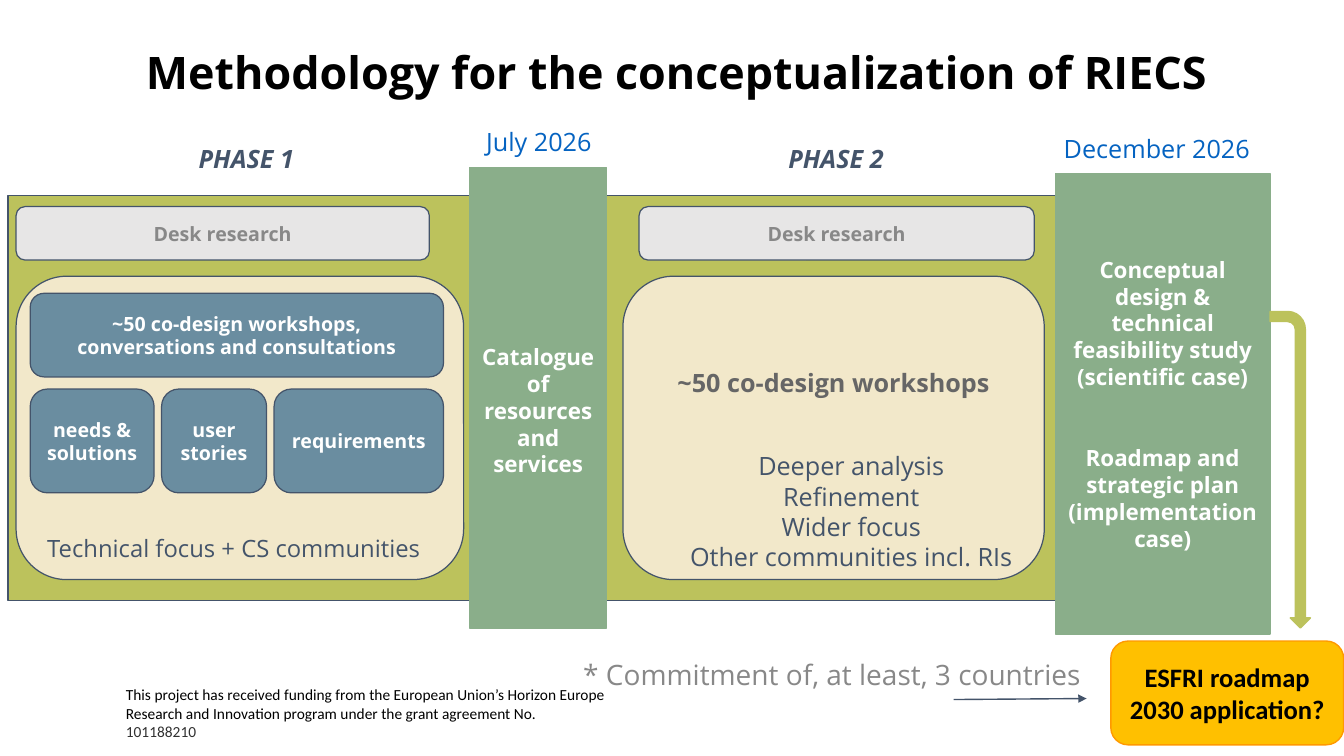
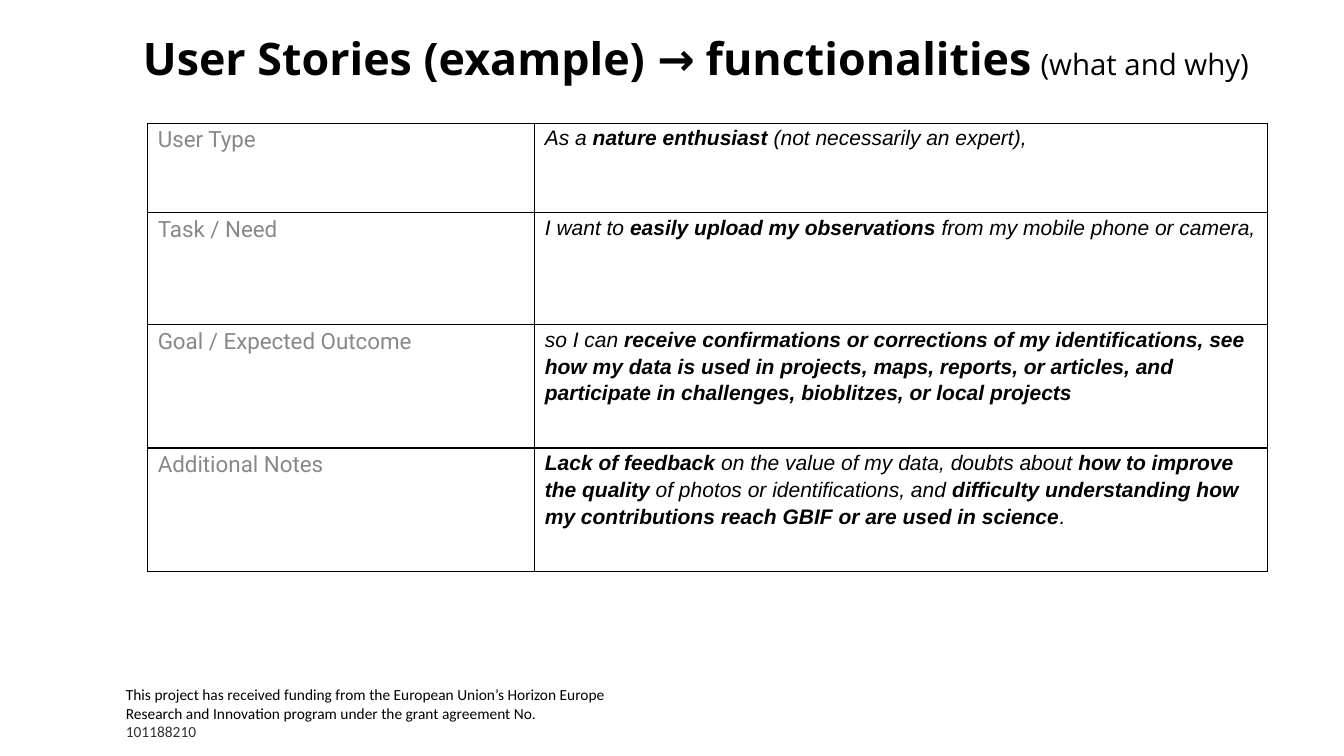
import pptx
import pptx.util
import pptx.dml.color
import pptx.enum.shapes
import pptx.enum.text
import pptx.oxml
import pptx.oxml.ns
from lxml import etree

Pt = pptx.util.Pt
RGB = pptx.dml.color.RGBColor
SHAPE = pptx.enum.shapes.MSO_SHAPE
ALIGN = pptx.enum.text.PP_ALIGN
ANCHOR = pptx.enum.text.MSO_ANCHOR
qn = pptx.oxml.ns.qn

# Shared colours and fonts
BLACK, WHITE = RGB(0, 0, 0), RGB(255, 255, 255)
LIME, CREAM, GREEN = RGB(0xBC, 0xC2, 0x5C), RGB(0xF2, 0xE8, 0xCA), RGB(0x8A, 0xAE, 0x8A)
SLATE, STEEL, BLUE = RGB(0x44, 0x54, 0x6A), RGB(0x6A, 0x8D, 0xA0), RGB(0x05, 0x63, 0xC1)
PALE, GREY, DARK_GREY = RGB(0xE7, 0xE6, 0xE6), RGB(0x88, 0x88, 0x88), RGB(0x66, 0x66, 0x66)
AMBER, ORANGE, CHARCOAL = RGB(0xFF, 0xC0, 0), RGB(0xFF, 0x99, 0), RGB(0x30, 0x30, 0x30)
SANS = "Open Sans"
TITLE_SIZE = (889.92, 59.76)
FOOTER_BOX = (82.8, 486, 358.2, 47.52)

# Shared content: (text, overrides) runs
FOOTER = [("This project has received funding from the European Union’s Horizon Europe "
           "Research and Innovation program under the grant agreement No. ", {}),
          ("101188210", {"color": CHARCOAL})]

# Slide 1 content
METHOD_TITLE = [("Methodology for the conceptualization of RIECS", {"bold": True})]
BANDS = [5.76, 426.96]
BAND_TOP, BAND_SIZE = 139.68, (339.84, 289.44)
PHASE_PANELS = [(11.52, 197.28, 319.68, 216.72), (444.96, 197.28, 300.96, 216.72)]
DESK_RESEARCH = [(11.52, 295.2), (456.48, 282.24)]
PHASES = [("PHASE 1", 133.2), ("PHASE 2", 554.4)]
DATES = [("July 2026", 305, 81.36, 159.84), ("December 2026", 739.5, 86.4, 173.52)]
RESULTS = [
    (["Catalogue of resources and services"], (335.52, 119.52, 97.92, 329.04), 18),
    (["Conceptual design & technical feasibility study", "(scientific case)",
      "Roadmap and strategic plan (implementation case)"],
     (753.84, 123.84, 153.36, 329.04), 0),
]
WORKSHOPS = ["~50 co-design workshops,", "conversations and consultations"]
FINDINGS = [("needs & solutions", 88.5), ("user stories", 75), ("requirements", 121)]
FINDINGS_LEFT, FINDINGS_GAP = 21.6, 5.35
PHASE_2_FOCUS = ["Deeper analysis", "Refinement", "Wider focus", "Other communities incl. RIs"]

# Slide 2 content; ** toggles bold
STORIES_TITLE = [("User Stories (example) → functionalities", {"bold": True}),
                 (" (what and why)", {"size": 21})]
STORY_ROWS = [
    ("User Type", "As a **nature enthusiast **(not necessarily an expert),", 64),
    ("Task / Need",
     "I want to **easily upload my observations** from my mobile phone or camera,", 80),
    ("Goal / Expected Outcome",
     "so I can **receive confirmations or corrections of my identifications, see how my data "
     "is used in projects, maps, reports, or articles, and participate in challenges, "
     "bioblitzes, or local projects**", 88),
    ("Additional Notes",
     "**Lack of feedback** on the value of my data, doubts about **how to improve the quality** "
     "of photos or identifications, and **difficulty understanding how my contributions reach "
     "GBIF or are used in science**.", 88),
]
STORY_COLUMNS = [276.5, 523.5]


def style(font, size=None, color=None, name=None, bold=None, italic=None):
    if size:
        font.size = Pt(size)
    if color is not None:
        font.color.rgb = color
    if name:
        font.name = name
    if bold is not None:
        font.bold = bold
    if italic is not None:
        font.italic = italic


def write(frame, paragraphs, align=ALIGN.LEFT, spacing=None, gaps=None, **font):
    """Each paragraph is a string or a list of (text, overrides) runs."""
    for index, content in enumerate(paragraphs):
        paragraph = frame.paragraphs[0] if index == 0 else frame.add_paragraph()
        paragraph.alignment = align
        if spacing:
            paragraph.line_spacing = spacing
        if gaps and index in gaps:
            paragraph.space_before = Pt(gaps[index])
        style(paragraph.font, **font)
        for text, overrides in [(content, {})] if isinstance(content, str) else content:
            run = paragraph.add_run()
            run.text = text
            style(run.font, **overrides)


def set_insets(frame, left, top, right, bottom):
    frame.margin_left, frame.margin_top = Pt(left), Pt(top)
    frame.margin_right, frame.margin_bottom = Pt(right), Pt(bottom)


def add_text(slide, box, paragraphs, insets=(8.64,) * 4, **options):
    frame = slide.shapes.add_textbox(*map(Pt, box)).text_frame
    frame.word_wrap = True
    set_insets(frame, *insets)
    write(frame, paragraphs, **options)


def add_block(slide, kind, box, fill, line=SLATE, weight=0.89, paragraphs=(),
              insets=(8.64,) * 4, **options):
    block = slide.shapes.add_shape(kind, *map(Pt, box))
    block.shadow.inherit = False
    block.fill.solid()
    block.fill.fore_color.rgb = fill
    block.line.color.rgb = line
    block.line.width = Pt(weight)
    frame = block.text_frame
    frame.word_wrap = True
    frame.vertical_anchor = ANCHOR.MIDDLE
    set_insets(frame, *insets)
    write(frame, paragraphs, align=ALIGN.CENTER, **options)
    return block


def add_framed_slide(deck, title, left, top):
    slide = deck.slides.add_slide(deck.slide_layouts[6])
    insets = (7.2, 3.6, 7.2, 3.6)
    add_text(slide, FOOTER_BOX, [FOOTER], insets, size=11, name="Calibri", color=BLACK)
    add_text(slide, (left, top, *TITLE_SIZE), [title], insets, spacing=0.9,
             size=32, name=SANS, color=BLACK)
    return slide


def add_arrow(slide, start, end):
    arrow = slide.shapes.add_connector(pptx.enum.shapes.MSO_CONNECTOR.STRAIGHT,
                                       *map(Pt, (*start, *end)))
    arrow.line.color.rgb = SLATE
    arrow.line.width = Pt(1)
    etree.SubElement(arrow.line._get_or_add_ln(), qn("a:tailEnd"), type="triangle")
    etree.SubElement(arrow._element.spPr, qn("a:effectLst"))


def add_borders(cell):
    properties = cell._tc.get_or_add_tcPr()
    for side in ("a:lnL", "a:lnR", "a:lnT", "a:lnB"):
        border = etree.SubElement(properties, qn(side), w=str(Pt(1)))
        fill = etree.SubElement(border, qn("a:solidFill"))
        etree.SubElement(fill, qn("a:srgbClr"), val=str(BLACK))


def build_methodology(deck):
    slide = add_framed_slide(deck, METHOD_TITLE, 97.2, 32.4)
    rounded = SHAPE.ROUNDED_RECTANGLE

    # Phase bands, panels and desk research
    for left in BANDS:
        add_block(slide, SHAPE.RECTANGLE, (left, BAND_TOP, *BAND_SIZE), LIME)
    add_block(slide, rounded, PHASE_PANELS[0], CREAM)
    add_block(slide, rounded, PHASE_PANELS[1], CREAM, paragraphs=["~50 co-design workshops"],
              insets=(8.64, 8.64, 8.64, 74), size=18, name=SANS, color=DARK_GREY, bold=True)
    for left, width in DESK_RESEARCH:
        add_block(slide, rounded, (left, 147.6, width, 38.16), PALE,
                  paragraphs=["Desk research"], size=14, name=SANS, color=GREY, bold=True)

    # Result columns, with their dates and phase names
    for lines, box, drop in RESULTS:
        add_block(slide, SHAPE.RECTANGLE, box, GREEN, GREEN, paragraphs=lines,
                  insets=(8.64, 8.64 + drop, 8.64, 8.64), gaps={2: 38.5},
                  size=16, name=SANS, color=WHITE, bold=True)
    for date, left, top, width in DATES:
        add_text(slide, (left, top, width, 53.28), [date], align=ALIGN.CENTER,
                 size=18, name=SANS, color=BLUE)
    for phase, left in PHASES:
        add_text(slide, (left, 93.6, 111.6, 38.88), [phase],
                 size=18, name=SANS, color=SLATE, bold=True, italic=True)

    # Phase 1 activities
    activity = dict(insets=(7.2,) * 4, size=14, name=SANS, color=WHITE, bold=True)
    add_block(slide, rounded, (FINDINGS_LEFT, 209.52, 295.2, 59.76), STEEL,
              paragraphs=WORKSHOPS, **activity)
    left = FINDINGS_LEFT
    for finding, width in FINDINGS:
        add_block(slide, rounded, (left, 277.92, width, 74.16), STEEL,
                  paragraphs=[finding], **activity)
        left += width + FINDINGS_GAP
    add_text(slide, (26.64, 373.68, 289.44, 35.28), ["Technical focus + CS communities"],
             (7.2,) * 4, size=17, name=SANS, color=SLATE)

    # Phase 2 focus
    add_text(slide, (451.44, 313.2, 313.2, 104.4), PHASE_2_FOCUS, align=ALIGN.CENTER,
             size=18, name=SANS, color=SLATE)

    # Outcome
    add_block(slide, rounded, (793.44, 457.92, 166.32, 74.16), AMBER, ORANGE, 1,
              ["ESFRI roadmap 2030 application?"], (7.2,) * 4,
              size=19, name="Calibri", color=BLACK, bold=True)
    bend = add_block(slide, SHAPE.BENT_ARROW, (808.56, 321.12, 226.08, 28.8), LIME, LIME, 1)
    bend.rotation = 90
    for index, value in enumerate((0.25, 0.25, 0.25, 0.44)):
        bend.adjustments[index] = value
    add_arrow(slide, (681.12, 499.68), (776.16, 498.96))
    add_text(slide, (383.76, 460.08, 421.2, 43.92), ["* Commitment of, at least, 3 countries"],
             (9.36,) * 4, align=ALIGN.CENTER, size=20, name=SANS, color=GREY)


def build_user_stories(deck):
    slide = add_framed_slide(deck, STORIES_TITLE, 95.04, 23.04)
    heights = [height for _, _, height in STORY_ROWS]
    table = slide.shapes.add_table(
        len(STORY_ROWS), len(STORY_COLUMNS),
        *map(Pt, (105.5, 88, sum(STORY_COLUMNS), sum(heights)))).table
    table.first_row = table.horz_banding = False
    for column, width in zip(table.columns, STORY_COLUMNS):
        column.width = Pt(width)
    for row, (label, story, height) in zip(table.rows, STORY_ROWS):
        row.height = Pt(height)
        for cell in row.cells:
            add_borders(cell)
            cell.fill.background()
            set_insets(cell, 7.2, 0, 7.2, 0)
        runs = [(text, {"bold": bool(index % 2)})
                for index, text in enumerate(story.split("**")) if text]
        label_cell, story_cell = row.cells
        write(label_cell.text_frame, [label], spacing=1.15, size=16, name="Roboto", color=GREY)
        write(story_cell.text_frame, [runs], spacing=1.15, size=15, name="Arial",
              color=BLACK, italic=True)


def main():
    deck = pptx.Presentation()
    deck.slide_width, deck.slide_height = Pt(960), Pt(540)
    build_methodology(deck)
    build_user_stories(deck)
    deck.save("out.pptx")


if __name__ == "__main__":
    main()
